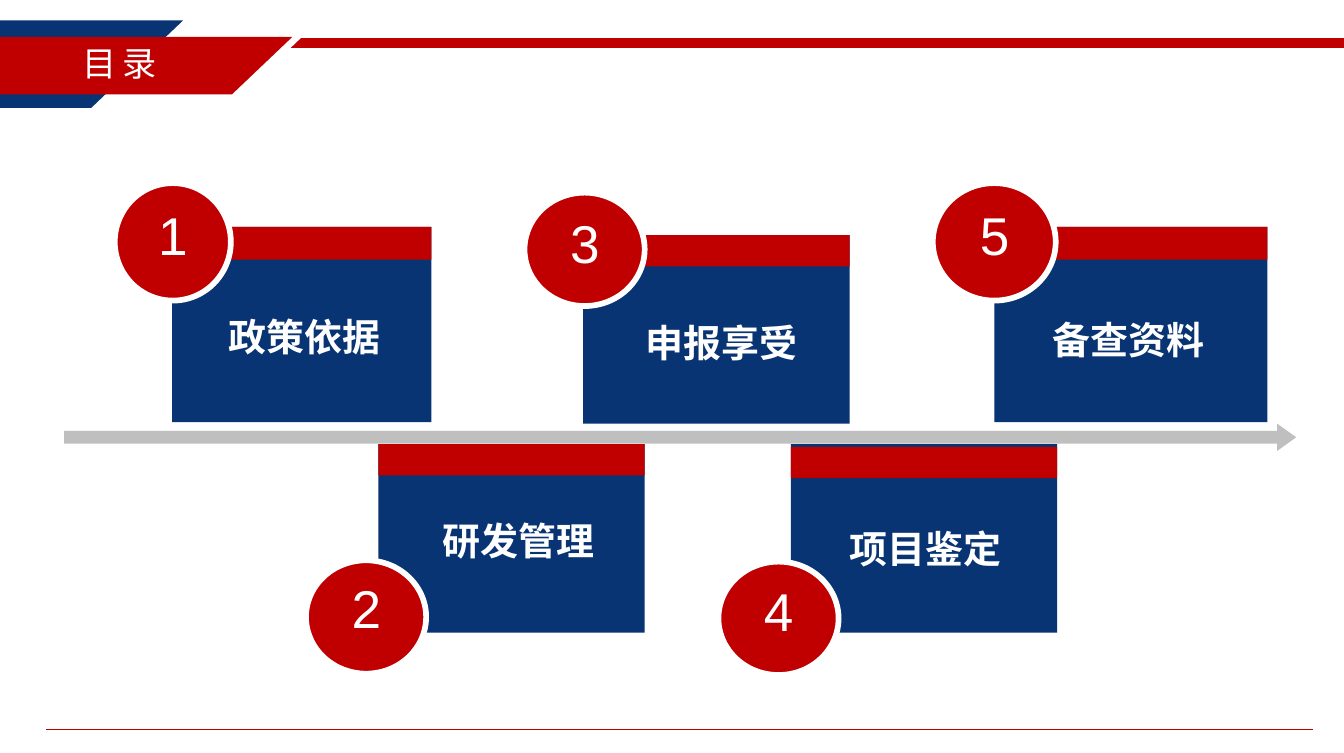
from dataclasses import dataclass

from lxml import etree
from pptx import Presentation
from pptx.dml.color import RGBColor
from pptx.enum.shapes import MSO_CONNECTOR, MSO_SHAPE
from pptx.enum.text import MSO_ANCHOR, MSO_AUTO_SIZE, PP_ALIGN
from pptx.oxml.ns import qn
from pptx.util import Inches, Pt

RECT, OVAL = MSO_SHAPE.RECTANGLE, MSO_SHAPE.OVAL
ARROW, SLANT = MSO_SHAPE.RIGHT_ARROW, MSO_SHAPE.PARALLELOGRAM
STRAIGHT = MSO_CONNECTOR.STRAIGHT
CENTER, MIDDLE = PP_ALIGN.CENTER, MSO_ANCHOR.MIDDLE
NO_AUTOFIT = MSO_AUTO_SIZE.NONE

NAVY = RGBColor(0x08, 0x34, 0x73)
RED = RGBColor(0xC0, 0x00, 0x00)
GRAY = RGBColor(0xBF, 0xBF, 0xBF)
WHITE = RGBColor(0xFF, 0xFF, 0xFF)
LATIN, CJK = "Arial", "Noto Sans CJK SC"
SLANT_ADJ = 1.051

Box = tuple[float, float, float, float]


@dataclass
class Card:
    number: str
    label: str
    body: Box
    band_top: float
    band_height: float
    circle: Box
    number_top: float
    label_box: Box


CARDS = [
    Card("1", "政策依据", (1.26, 1.66, 1.9, 1.43), 1.66, 0.24,
         (0.84, 1.34, 0.85, 0.86), 1.43, (1.4, 2.08, 1.66, 0.55)),
    Card("2", "研发管理", (2.77, 3.25, 1.95, 1.38), 3.25, 0.23,
         (2.24, 4.1, 0.88, 0.83), 4.16, (2.95, 3.57, 1.7, 0.6)),
    Card("3", "申报享受", (4.27, 1.72, 1.95, 1.38), 1.72, 0.23,
         (3.84, 1.41, 0.88, 0.83), 1.49, (4.43, 2.12, 1.7, 0.55)),
    Card("4", "项目鉴定", (5.79, 3.25, 1.95, 1.38), 3.27, 0.23,
         (5.26, 4.11, 0.88, 0.83), 4.18, (5.93, 3.63, 1.7, 0.55)),
    Card("5", "备查资料", (7.28, 1.66, 2, 1.43), 1.66, 0.24,
         (6.83, 1.34, 0.9, 0.86), 1.43, (7.39, 2.1, 1.75, 0.55)),
]
RIBBONS = [
    ((-0.81, 0.15, 2.15, 0.64), NAVY),
    ((-0.81, 0.27, 2.95, 0.42), RED),
    ((2.13, 0.28, 8.17, 0.07), RED),
]


def add_block(shapes, kind, box: Box, fill: RGBColor, adj: tuple[float, ...] = ()):
    sp = shapes.add_shape(kind, *map(Inches, box))
    sp.shadow.inherit = False
    sp.fill.solid()
    sp.fill.fore_color.rgb = fill
    sp.line.fill.background()
    for i, value in enumerate(adj):
        sp.adjustments[i] = value
    return sp


def style_text(p, size: int, latin: str, bold: bool = False) -> None:
    p.alignment = CENTER
    r = p.runs[0]
    r.font.size, r.font.name, r.font.bold = Pt(size), latin, bold
    r.font.color.rgb = WHITE
    etree.SubElement(r.font._element, qn("a:ea")).set("typeface", CJK)


def add_text(shapes, text: str, box: Box, size: int, wrap: bool = True,
             bold: bool = False, spacing: float = 1.0) -> None:
    tf = shapes.add_textbox(*map(Inches, box)).text_frame
    tf.word_wrap = wrap
    tf.text = text
    p = tf.paragraphs[0]
    p.line_spacing = spacing
    style_text(p, size, LATIN, bold)


def add_card(s, card: Card) -> None:
    shapes = s.shapes.add_group_shape().shapes
    left, _, width, _ = card.body
    add_block(shapes, RECT, card.body, NAVY)
    add_block(shapes, RECT, (left, card.band_top, width, card.band_height), RED)
    circle = add_block(shapes, OVAL, card.circle, RED)
    circle.line.color.rgb = WHITE
    circle.line.width = Pt(3)
    center = card.circle[0] + card.circle[2] / 2
    add_text(shapes, card.number, (center - 0.205, card.number_top, 0.41, 0.57),
             28, wrap=False)
    add_text(shapes, card.label, card.label_box, 20, bold=True, spacing=1.5)


def add_title(s) -> None:
    title = s.shapes.title
    title.left, title.top, title.width, title.height = map(Inches, (0, 0.26, 1.75, 0.4))
    tf = title.text_frame
    tf.text = "目录"
    tf.auto_size = NO_AUTOFIT
    tf.vertical_anchor = MIDDLE
    style_text(tf.paragraphs[0], 18, CJK)
    tf.paragraphs[0].runs[0].font._element.set("spc", "300")
    # Bring the title in front of the ribbons
    s.shapes._spTree.append(title._element)


def main() -> None:
    prs = Presentation()
    prs.slide_width, prs.slide_height = Inches(9.84), Inches(5.51)
    s = prs.slides.add_slide(prs.slide_layouts[5])

    # Header
    for box, color in RIBBONS:
        add_block(s.shapes, SLANT, box, color, (SLANT_ADJ,))
    add_title(s)

    # Timeline
    add_block(s.shapes, ARROW, (0.47, 3.1, 9.02, 0.2), GRAY, (0.46, 0.698))
    for card in CARDS:
        add_card(s, card)

    # Footer rule
    rule = s.shapes.add_connector(STRAIGHT, *map(Inches, (0.34, 5.34, 9.61, 5.34)))
    rule.line.color.rgb = RED
    rule.line.width = Pt(0.5)
    etree.SubElement(rule._element.spPr, qn("a:effectLst"))

    prs.save("out.pptx")


if __name__ == "__main__":
    main()
